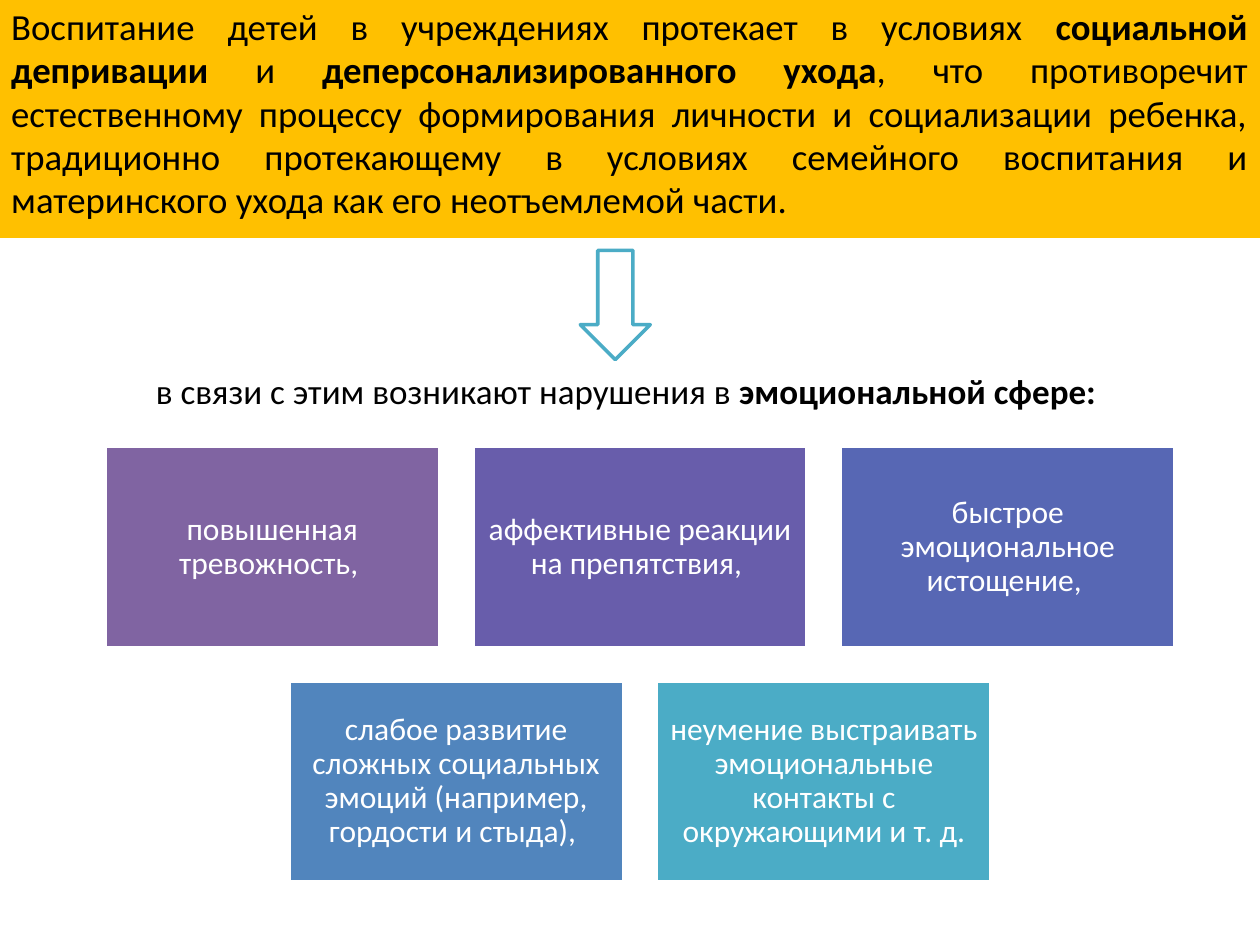
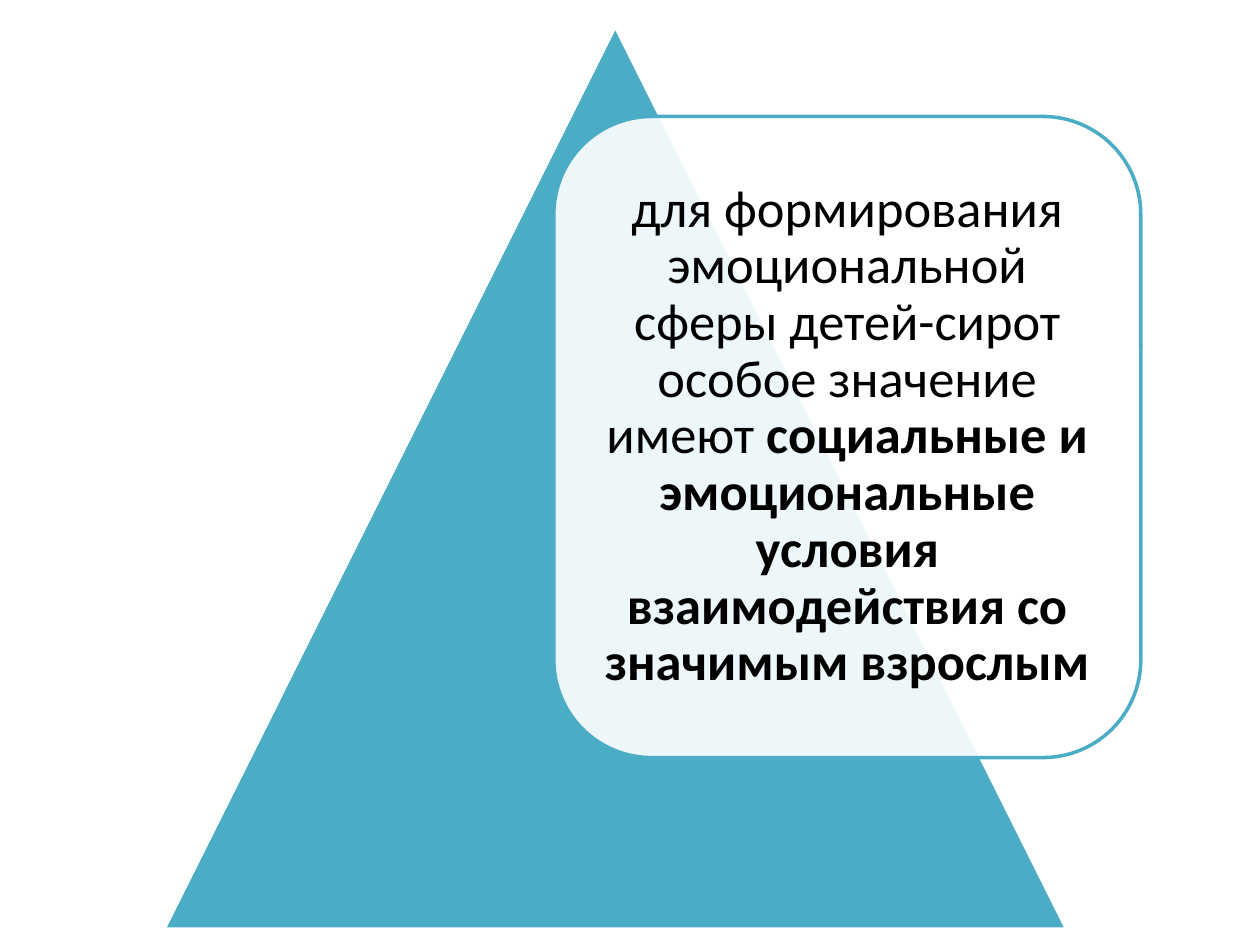
from lxml import etree
from pptx import Presentation
from pptx.dml.color import RGBColor
from pptx.enum.shapes import MSO_SHAPE
from pptx.enum.text import MSO_ANCHOR, PP_ALIGN
from pptx.oxml.ns import qn
from pptx.util import Pt

RECTANGLE = MSO_SHAPE.RECTANGLE
ROUNDED = MSO_SHAPE.ROUNDED_RECTANGLE
TRIANGLE = MSO_SHAPE.ISOSCELES_TRIANGLE
DOWN_ARROW = MSO_SHAPE.DOWN_ARROW
TOP, MIDDLE = MSO_ANCHOR.TOP, MSO_ANCHOR.MIDDLE
LEFT, CENTER, JUSTIFY = PP_ALIGN.LEFT, PP_ALIGN.CENTER, PP_ALIGN.JUSTIFY

FONT = "Calibri"
BLACK, WHITE, AMBER, TEAL = "000000", "FFFFFF", "FFC000", "4BACC6"
LINE_WIDTH = 2

INTRO = [
    ("Воспитание детей в учреждениях протекает в условиях ", False),
    ("социальной депривации ", True),
    ("и ", False),
    ("деперсонализированного ухода", True),
    (", что противоречит естественному процессу формирования личности и "
     "социализации ребенка, традиционно протекающему в условиях семейного "
     "воспитания и материнского ухода как его неотъемлемой части. ", False),
]
LEAD = [("в связи с этим возникают нарушения в ", False), ("эмоциональной сфере:", True)]
CARD_ROWS = [
    [("повышенная тревожность, ", "8064A2"),
     ("аффективные реакции на препятствия, ", "685DAB"),
     ("быстрое эмоциональное истощение, ", "5767B4")],
    [("слабое развитие сложных социальных эмоций (например, гордости и стыда), ", "5185BD"),
     ("неумение выстраивать эмоциональные контакты с окружающими и т. д.", TEAL)],
]
CONCLUSION = [
    ("для формирования эмоциональной сферы детей-сирот особое значение имеют ", False),
    ("социальные и эмоциональные условия взаимодействия со значимым взрослым", True),
]


def color(value):
    return RGBColor.from_string(value)


def add_box(slide, preset, box, fill, line=None):
    shape = slide.shapes.add_shape(preset, *map(Pt, box))
    shape.shadow.inherit = False
    shape.fill.solid()
    shape.fill.fore_color.rgb = color(fill)
    if line:
        shape.line.color.rgb = color(line)
        shape.line.width = Pt(LINE_WIDTH)
    else:
        shape.line.fill.background()
    return shape


def write(shape, runs, size, text_color=BLACK, align=CENTER, anchor=MIDDLE,
          margins=(7.2, 3.6), spacing=0.9, before=0):
    frame = shape.text_frame
    frame.word_wrap = True
    frame.vertical_anchor = anchor
    frame.margin_left = frame.margin_right = Pt(margins[0])
    frame.margin_top = frame.margin_bottom = Pt(margins[1])
    paragraph = frame.paragraphs[0]
    paragraph.alignment = align
    paragraph.line_spacing = spacing
    paragraph.space_before = Pt(before)
    for text, bold in runs:
        run = paragraph.add_run()
        run.text = text
        run.font.name = FONT
        run.font.size = Pt(size)
        run.font.bold = bold
        run.font.color.rgb = color(text_color)


def set_opacity(shape, percent):
    fill_color = shape.fill._xPr.find(qn("a:solidFill"))[0]
    etree.SubElement(fill_color, qn("a:alpha"), val=str(percent * 1000))


def add_intro_band(slide, box):
    band = add_box(slide, RECTANGLE, box, AMBER)
    write(band, INTRO, 21, align=JUSTIFY, anchor=TOP, spacing=0.98, before=4.2)


def add_lead(slide, box):
    lead = slide.shapes.add_textbox(*map(Pt, box))
    write(lead, LEAD, 20, align=LEFT, anchor=TOP, spacing=1)


def add_cards(slide, box, gap=19):
    left, top, width, height = box
    columns = max(map(len, CARD_ROWS))
    card_width = (width - gap * (columns - 1)) / columns
    card_height = (height - gap * (len(CARD_ROWS) - 1)) / len(CARD_ROWS)
    for row_index, row in enumerate(CARD_ROWS):
        row_left = left + (columns - len(row)) * (card_width + gap) / 2
        row_top = top + row_index * (card_height + gap)
        for column, (text, fill) in enumerate(row):
            card_left = row_left + column * (card_width + gap)
            card = add_box(slide, RECTANGLE, (card_left, row_top, card_width, card_height),
                           fill, WHITE)
            write(card, [(text, False)], 18, WHITE, margins=(5, 5))


def add_pyramid(slide, box):
    left, top, side, _ = box
    add_box(slide, TRIANGLE, box, TEAL, WHITE)
    panel_box = (left + side * 0.432, top + side * 0.1, side * 0.65, side * 0.71)
    panel = add_box(slide, ROUNDED, panel_box, WHITE, TEAL)
    set_opacity(panel, 90)
    write(panel, CONCLUSION, 30, margins=(8.6, 8.6))


def add_slide(presentation):
    return presentation.slides.add_slide(presentation.slide_layouts[6])


def build_disorders_slide(presentation):
    slide = add_slide(presentation)
    add_intro_band(slide, (-0.7, 0, 720.7, 136))
    add_cards(slide, (60, 255, 611.5, 249))
    add_box(slide, DOWN_ARROW, (331.6, 143, 40, 62.5), WHITE, TEAL)
    add_lead(slide, (82, 207.5, 578, 31.5))


def build_conclusion_slide(presentation):
    slide = add_slide(presentation)
    add_pyramid(slide, (93.6, 15, 516, 516))


def main():
    presentation = Presentation()
    presentation.slide_width = Pt(720)
    presentation.slide_height = Pt(540)
    build_disorders_slide(presentation)
    build_conclusion_slide(presentation)
    presentation.save("out.pptx")


if __name__ == "__main__":
    main()
